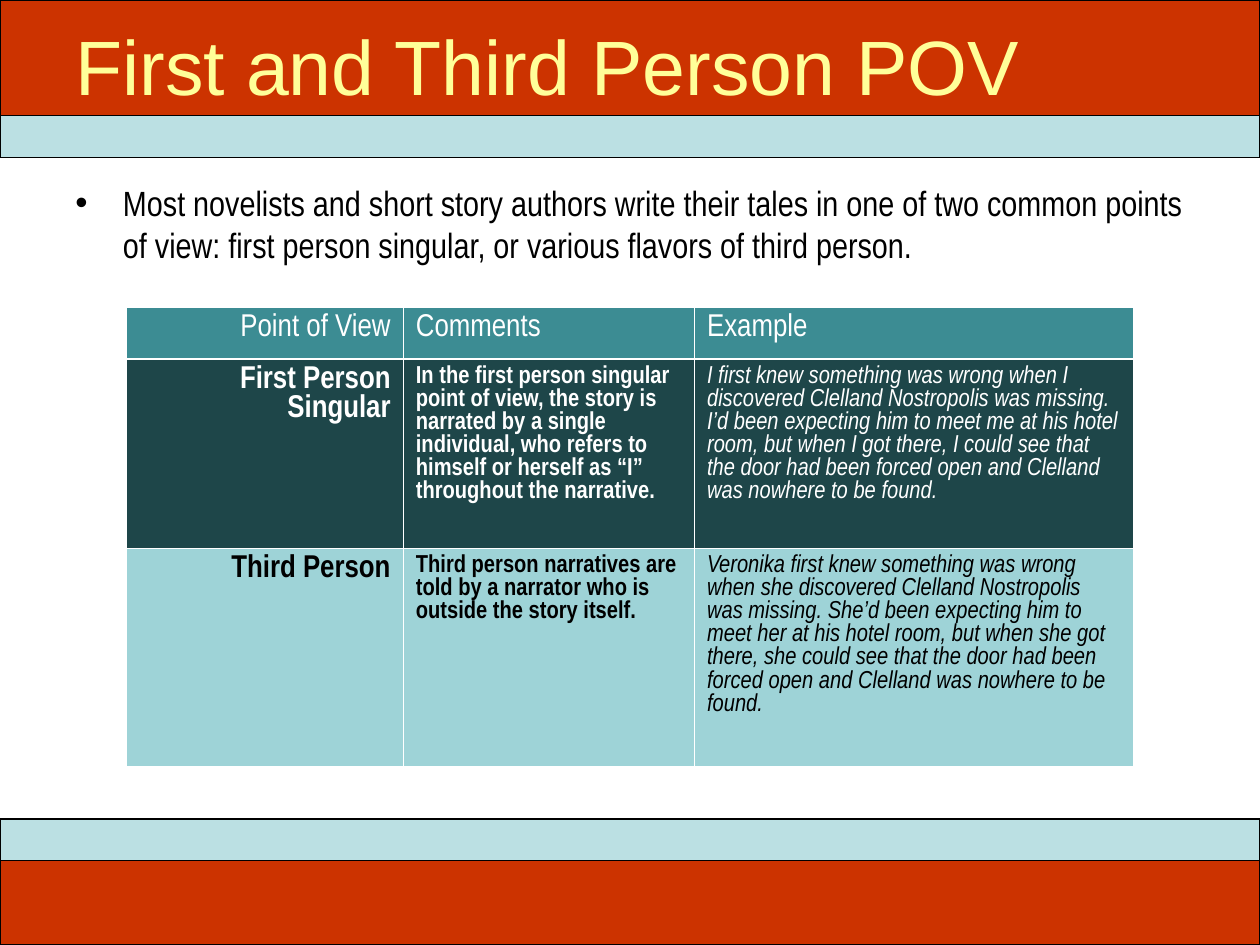
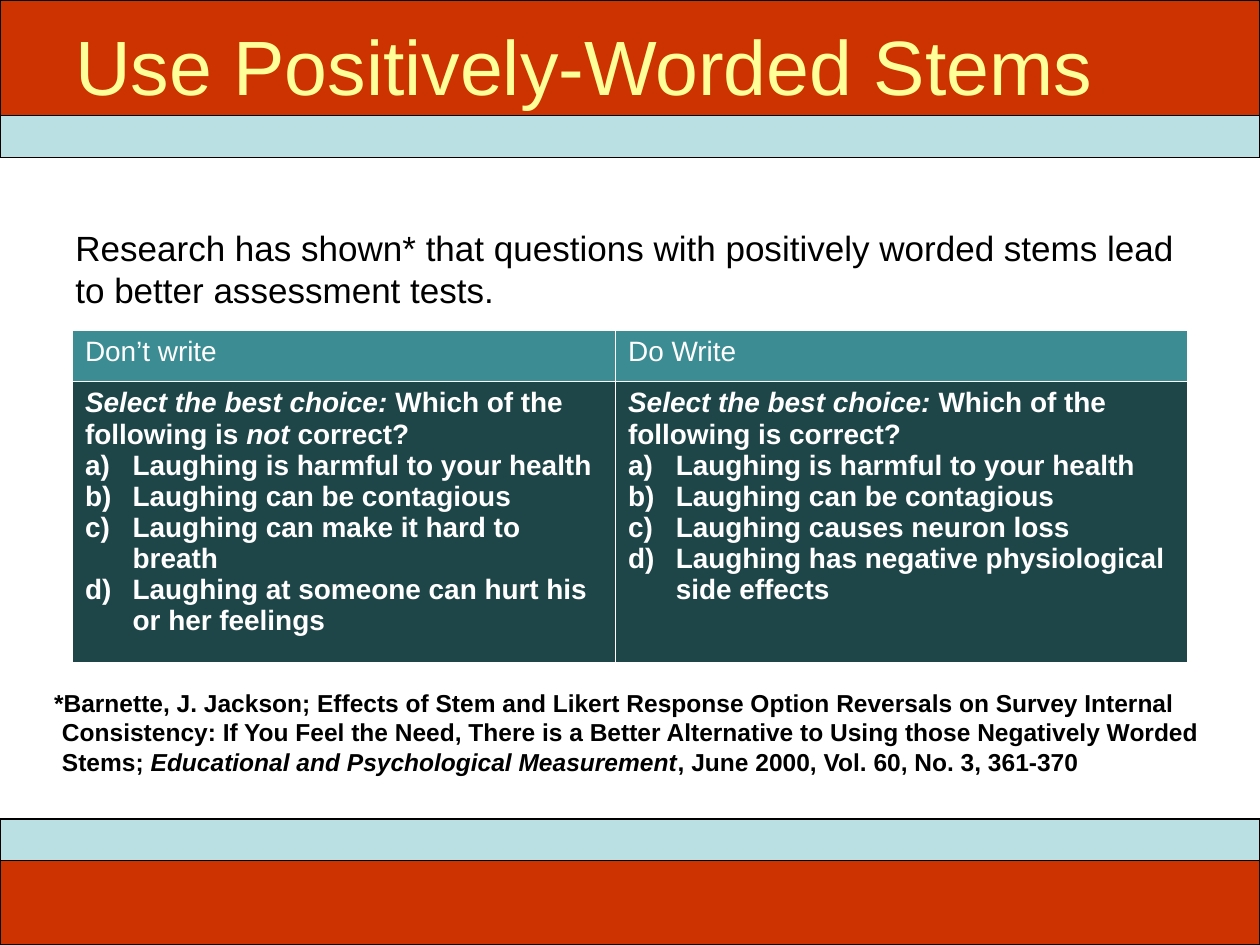
from dataclasses import dataclass
from typing import Optional

import lxml.etree
import pptx
import pptx.dml.color
import pptx.enum.shapes
import pptx.enum.text
import pptx.oxml.ns
import pptx.util

Cm = pptx.util.Cm
Pt = pptx.util.Pt
PP_ALIGN = pptx.enum.text.PP_ALIGN
MSO_ANCHOR = pptx.enum.text.MSO_ANCHOR

COLORS = {
    "red": "CC3300",
    "pale blue": "BBE0E3",
    "title yellow": "FFFF99",
    "header teal": "3C8C93",
    "dark teal": "1E4649",
    "light teal": "9ED3D7",
    "black": "000000",
    "white": "FFFFFF",
}
SLIDE_WIDTH, SLIDE_HEIGHT = 25.4, 19.05
LIST_INDENT = 0.96


@dataclass
class Band:
    top: float
    height: float
    color: str


@dataclass
class Run:
    text: str
    bold: bool = False
    italic: bool = False


@dataclass
class TextStyle:
    font: str
    size: float
    color: str = "black"


@dataclass
class Paragraph:
    runs: list[Run]
    bullet: Optional[str] = None
    numbering: Optional[str] = None
    indent: float = 0
    align: PP_ALIGN = PP_ALIGN.LEFT
    space_before: float = 0


@dataclass
class Box:
    left: float
    top: float
    width: float
    height: float


@dataclass
class Cell:
    paragraphs: list[Paragraph]
    style: TextStyle


@dataclass
class Row:
    height: float
    fill: str
    cells: list[Cell]


BANDS = [
    Band(2.33, 0.84, "pale blue"),
    Band(0, 2.33, "red"),
    Band(16.51, 0.84, "pale blue"),
    Band(17.35, 1.7, "red"),
]
TITLE_BOX = Box(1.27, 0.42, 22.86, 1.78)
TITLE_STYLE = TextStyle("Arial", 44, "title yellow")


def rgb(name: str) -> pptx.dml.color.RGBColor:
    return pptx.dml.color.RGBColor.from_string(COLORS[name])


def add_xml(parent, tag: str, **attributes: str):
    element = lxml.etree.SubElement(parent, pptx.oxml.ns.qn(tag))
    for key, value in attributes.items():
        element.set(key, value)
    return element


def write_text(text_frame, paragraphs: list[Paragraph], style: TextStyle) -> None:
    for index, content in enumerate(paragraphs):
        paragraph = text_frame.add_paragraph() if index else text_frame.paragraphs[0]
        paragraph.alignment = content.align
        if content.space_before:
            paragraph.space_before = Pt(content.space_before)
        properties = paragraph._p.get_or_add_pPr()
        if content.indent:
            properties.set("marL", str(Cm(content.indent)))
            properties.set("indent", str(-Cm(content.indent)))
        if content.bullet:
            add_xml(properties, "a:buFont", typeface="Arial")
            add_xml(properties, "a:buChar", char=content.bullet)
        elif content.numbering:
            add_xml(properties, "a:buAutoNum", type=content.numbering)
        for part in content.runs:
            run = paragraph.add_run()
            run.text = part.text
            run.font.name = style.font
            run.font.size = Pt(style.size)
            run.font.bold = part.bold
            run.font.italic = part.italic
            run.font.color.rgb = rgb(style.color)


def add_text(slide, box: Box, paragraphs: list[Paragraph], style: TextStyle):
    shape = slide.shapes.add_textbox(
        Cm(box.left), Cm(box.top), Cm(box.width), Cm(box.height))
    shape.text_frame.word_wrap = True
    write_text(shape.text_frame, paragraphs, style)
    return shape


def add_titled_slide(presentation, title: str):
    """Add a blank slide with the shared bands and title."""
    slide = presentation.slides.add_slide(presentation.slide_layouts[6])
    for band in BANDS:
        shape = slide.shapes.add_shape(
            pptx.enum.shapes.MSO_SHAPE.RECTANGLE,
            0, Cm(band.top), Cm(SLIDE_WIDTH), Cm(band.height))
        shape.shadow.inherit = False
        shape.fill.solid()
        shape.fill.fore_color.rgb = rgb(band.color)
        shape.line.color.rgb = rgb("black")
        shape.line.width = Pt(0.75)
    title_shape = add_text(slide, TITLE_BOX, [Paragraph([Run(title)])], TITLE_STYLE)
    title_shape.text_frame.vertical_anchor = MSO_ANCHOR.MIDDLE
    return slide


def style_cell(cell, fill: str) -> None:
    """Give a cell thin white borders and a solid fill."""
    properties = cell._tc.get_or_add_tcPr()
    for side in ("a:lnL", "a:lnR", "a:lnT", "a:lnB"):
        line = add_xml(properties, side, w=str(Pt(1)))
        add_xml(add_xml(line, "a:solidFill"), "a:srgbClr", val=COLORS["white"])
    cell.fill.solid()
    cell.fill.fore_color.rgb = rgb(fill)


def add_table(slide, left: float, top: float, widths: list[float], rows: list[Row]) -> None:
    table = slide.shapes.add_table(
        len(rows), len(widths), Cm(left), Cm(top),
        Cm(sum(widths)), Cm(sum(row.height for row in rows))).table
    table.horz_banding = False
    table.first_row = False
    for column, width in zip(table.columns, widths):
        column.width = Cm(width)
    for row_index, row in enumerate(rows):
        table.rows[row_index].height = Cm(row.height)
        for column_index, content in enumerate(row.cells):
            cell = table.cell(row_index, column_index)
            style_cell(cell, row.fill)
            write_text(cell.text_frame, content.paragraphs, content.style)


def point_of_view_row(height: float, fill: str, color: str, texts: list[str],
                      header: bool = False) -> Row:
    """Right-aligned label, bold comment and italic example; a header is plain."""
    cells = []
    for index, text in enumerate(texts):
        run = Run(text, bold=not header and index < 2, italic=not header and index == 2)
        align = PP_ALIGN.LEFT if index else PP_ALIGN.RIGHT
        size = 18 if header or index == 0 else 14
        cells.append(Cell([Paragraph([run], align=align)],
                          TextStyle("Arial Narrow", size, color)))
    return Row(height, fill, cells)


def question(stem: list[Run], choices: list[str]) -> list[Paragraph]:
    lead = Run("Select the best choice: ", bold=True, italic=True)
    return [Paragraph([lead, *stem])] + [
        Paragraph([Run(choice, bold=True)], numbering="alphaLcParenR", indent=LIST_INDENT)
        for choice in choices]


def build_point_of_view(presentation) -> None:
    slide = add_titled_slide(presentation, "First and Third Person POV")
    introduction = Run(
        "Most novelists and short story authors write their tales in one of two common "
        "points of view: first person singular, or various flavors of third person.")
    add_text(slide, Box(1.27, 3.53, 22.86, 11.86),
             [Paragraph([introduction], bullet="•", indent=LIST_INDENT, space_before=4)],
             TextStyle("Arial Narrow", 20))
    add_table(slide, 2.54, 6.2, [5.59, 5.87, 8.86], [
        point_of_view_row(1.04, "header teal", "white",
                          ["Point of View", "Comments", "Example"], header=True),
        point_of_view_row(3.81, "dark teal", "white", [
            "First Person Singular",
            "In the first person singular point of view, the story is narrated by a single "
            "individual, who refers to himself or herself as “I” throughout the narrative.",
            "I first knew something was wrong when I discovered Clelland Nostropolis was "
            "missing. I’d been expecting him to meet me at his hotel room, but when I got "
            "there, I could see that the door had been forced open and Clelland was nowhere "
            "to be found."]),
        point_of_view_row(3.81, "light teal", "black", [
            "Third Person",
            "Third person narratives are told by a narrator who is outside the story itself.",
            "Veronika first knew something was wrong when she discovered Clelland Nostropolis "
            "was missing. She’d been expecting him to meet her at his hotel room, but when "
            "she got there, she could see that the door had been forced open and Clelland "
            "was nowhere to be found."]),
    ])


def build_positive_stems(presentation) -> None:
    slide = add_titled_slide(presentation, "Use Positively-Worded Stems")
    finding = Run("Research has shown* that questions with positively worded stems lead "
                  "to better assessment tests.")
    add_text(slide, Box(1.27, 4.45, 22.86, 11.86),
             [Paragraph([finding], space_before=4)], TextStyle("Arial", 20))

    cell_style = TextStyle("Arial", 16, "white")
    shared_choices = ["Laughing is harmful to your health", "Laughing can be contagious"]
    negative_question = question(
        [Run("Which of the following is ", bold=True),
         Run("not", bold=True, italic=True),
         Run(" correct?", bold=True)],
        shared_choices + ["Laughing can make it hard to breath",
                          "Laughing at someone can hurt his or her feelings"])
    positive_question = question(
        [Run("Which of the following is correct?", bold=True)],
        shared_choices + ["Laughing causes neuron loss",
                          "Laughing has negative physiological side effects"])
    headings = [[Paragraph([Run(text)])] for text in ("Don’t write", "Do Write")]
    add_table(slide, 1.46, 6.65, [10.95, 11.53], [
        Row(1.04, "header teal", [Cell(text, cell_style) for text in headings]),
        Row(5.66, "dark teal", [Cell(text, cell_style)
                                for text in (negative_question, positive_question)]),
    ])

    citation = [
        Run("*Barnette, J. Jackson; Effects of Stem and Likert Response Option Reversals on "
            "Survey Internal Consistency: If You Feel the Need, There is a Better Alternative "
            "to Using those Negatively Worded Stems; ", bold=True),
        Run("Educational and Psychological Measurement", bold=True, italic=True),
        Run(", June 2000, Vol. 60, No. 3, 361-370", bold=True),
    ]
    add_text(slide, Box(0.84, 13.74, 23.75, 2.06),
             [Paragraph(citation, indent=0.16)], TextStyle("Arial", 14))


def main() -> None:
    presentation = pptx.Presentation()
    presentation.slide_width = Cm(SLIDE_WIDTH)
    presentation.slide_height = Cm(SLIDE_HEIGHT)
    build_point_of_view(presentation)
    build_positive_stems(presentation)
    presentation.save("out.pptx")


if __name__ == "__main__":
    main()
